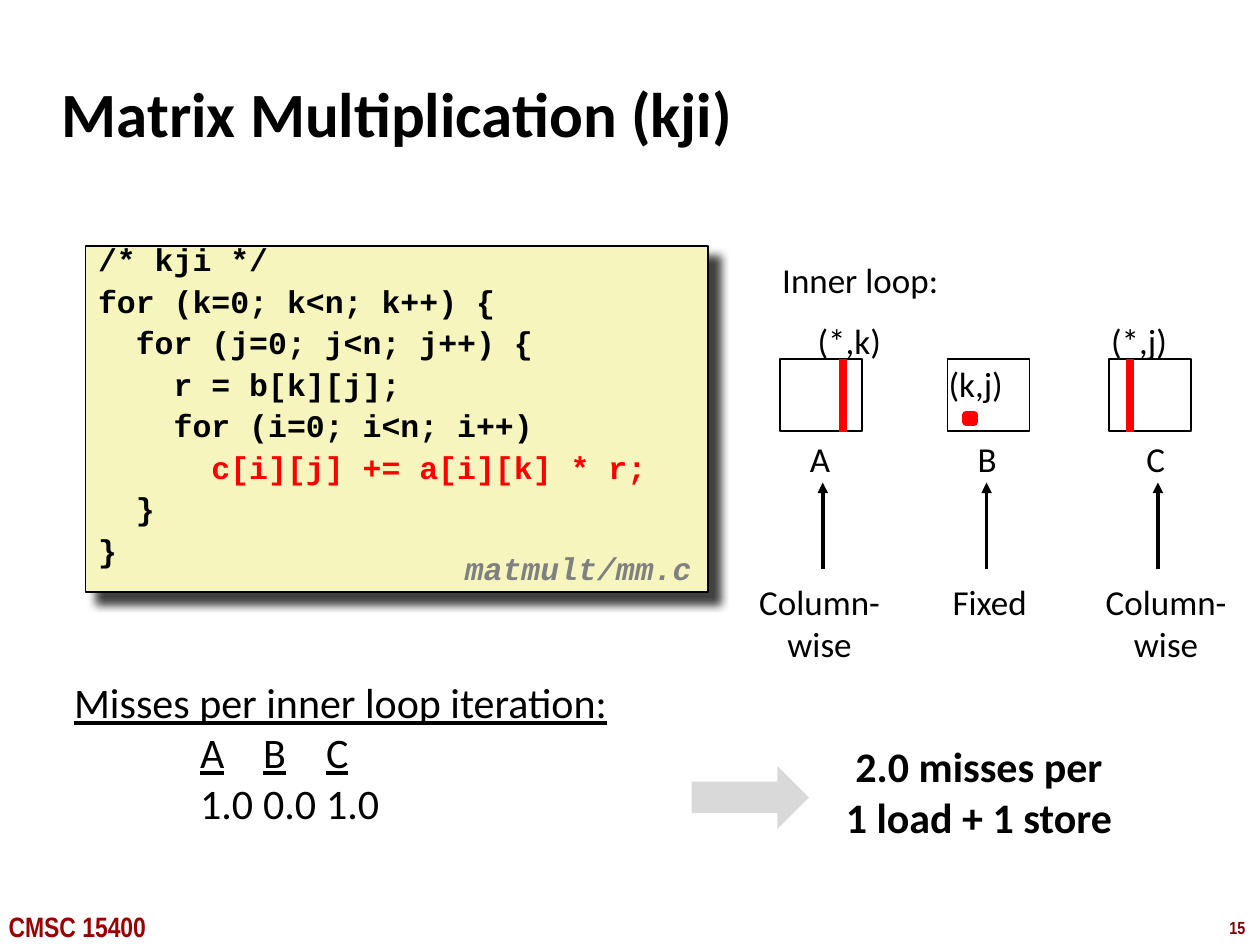
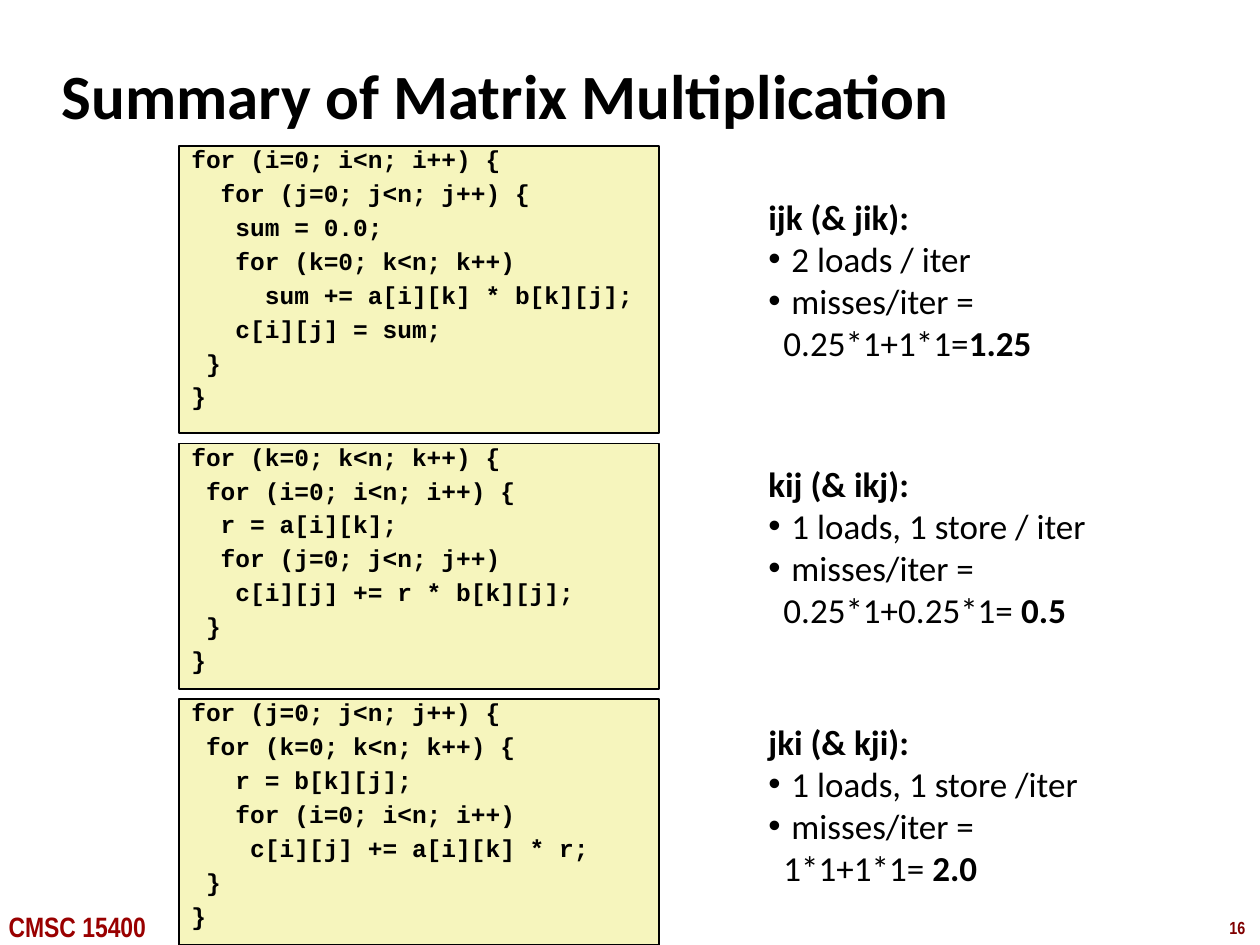
import lxml.etree
import pptx
import pptx.dml.color
import pptx.enum.shapes
import pptx.enum.text
import pptx.oxml.ns
import pptx.util

COLORS = {
    "ink": "000000", "paper": "FFFFFF", "code": "F6F5BD", "hot": "FF0000",
    "file": "808080", "arrow": "D9D9D9", "course": "990000", "number": "800000",
}
SANS, MONO, NARROW = "Calibri", "Courier New", "Arial Narrow"
COURSE = "CMSC 15400"

KJI = {
    "number": "15",
    "title": "Matrix Multiplication (kji)",
    "title_top": 0.48,
    "code": [
        "/* kji */",
        "for (k=0; k<n; k++) {",
        "  for (j=0; j<n; j++) {",
        "    r = b[k][j];",
        "    for (i=0; i<n; i++)",
        "      c[i][j] += a[i][k] * r;",
        "  }",
        "}",
    ],
    "hot_line": "c[i][j] += a[i][k] * r;",
    "file": "matmult/mm.c",
    "loop": "Inner loop:",
    "misses_title": "Misses per inner loop iteration:",
    "misses": {"A": "1.0", "B": "0.0", "C": "1.0"},
    "result": "2.0 misses per 1 load + 1 store",
}
MATRICES = [
    {"name": "A", "left": 6.19, "name_box": (6.33, 0.37), "index": "(*,k)",
     "index_box": (6.39, 2.49, 0.71), "access": ["Column-", "wise"],
     "access_box": (5.92, 1.17), "arrow": 6.53, "stripe": 6.69},
    {"name": "B", "left": 7.52, "name_box": (7.66, 0.35), "index": "(k,j)",
     "index_box": (7.43, 2.83, 0.63), "access": ["Fixed"],
     "access_box": (7.46, 0.79), "arrow": 7.83, "stripe": None},
    {"name": "C", "left": 8.8, "name_box": (9, 0.35), "index": "(*,j)",
     "index_box": (8.72, 2.49, 0.65), "access": ["Column-", "wise"],
     "access_box": (8.67, 1.17), "arrow": 9.19, "stripe": 8.97},
]

SUMMARY = {"number": "16", "title": "Summary of Matrix Multiplication", "title_top": 0.33}
ORDERS = [
    {"name": "ijk (& jik):", "loads": "2 loads / iter", "sum": "0.25*1+1*1=", "total": "1.25",
     "code_top": 1.16, "code_height": 2.28, "note_top": 1.5, "note_width": 3.83,
     "code": [
         "for (i=0; i<n; i++) {",
         "  for (j=0; j<n; j++) {",
         "   sum = 0.0;",
         "   for (k=0; k<n; k++)",
         "     sum += a[i][k] * b[k][j];",
         "   c[i][j] = sum;",
         " }",
         "}",
     ]},
    {"name": "kij (& ikj):", "loads": "1 loads, 1 store / iter", "sum": "0.25*1+0.25*1= ",
     "total": "0.5", "code_top": 3.52, "code_height": 1.95, "note_top": 3.62, "note_width": 3,
     "code": [
         "for (k=0; k<n; k++) {",
         " for (i=0; i<n; i++) {",
         "  r = a[i][k];",
         "  for (j=0; j<n; j++)",
         "   c[i][j] += r * b[k][j];",
         " }",
         "}",
     ]},
    {"name": "jki (& kji):", "loads": "1 loads, 1 store /iter", "sum": "1*1+1*1= ",
     "total": "2.0", "code_top": 5.55, "code_height": 1.95, "note_top": 5.67, "note_width": 3,
     "code": [
         "for (j=0; j<n; j++) {",
         " for (k=0; k<n; k++) {",
         "   r = b[k][j];",
         "   for (i=0; i<n; i++)",
         "    c[i][j] += a[i][k] * r;",
         " }",
         "}",
     ]},
]

CENTER = pptx.enum.text.PP_ALIGN.CENTER
RECTANGLE = pptx.enum.shapes.MSO_SHAPE.RECTANGLE


def inches(*lengths):
    return [pptx.util.Inches(length) for length in lengths]


def rgb(name):
    return pptx.dml.color.RGBColor.from_string(COLORS[name])


def element(parent, tag, **attributes):
    child = lxml.etree.SubElement(parent, pptx.oxml.ns.qn(tag))
    for key, value in attributes.items():
        child.set(key, str(value))
    return child


def add_span(para, text, size=20, font=SANS, color="ink", bold=False, italic=False,
             underline=False):
    span = para.add_run()
    span.text = text
    span.font.size = pptx.util.Pt(size)
    span.font.name = font
    span.font.color.rgb = rgb(color)
    span.font.bold = bold
    span.font.italic = italic
    span.font.underline = underline
    return span


def next_para(frame, index):
    return frame.add_paragraph() if index else frame.paragraphs[0]


def add_box(page, left, top, width, height, wrap=True):
    frame = page.shapes.add_textbox(*inches(left, top, width, height)).text_frame
    frame.word_wrap = wrap
    return frame


def add_label(page, lines, left, top, width, height=0.43, align=None, **style):
    frame = add_box(page, left, top, width, height, wrap=False)
    for index, line in enumerate(lines):
        para = next_para(frame, index)
        para.alignment = align
        add_span(para, line, **style)
    return frame


def add_block(page, kind, left, top, width, height, fill, line=None, weight=1):
    block = page.shapes.add_shape(kind, *inches(left, top, width, height))
    block.shadow.inherit = False
    block.fill.solid()
    block.fill.fore_color.rgb = rgb(fill)
    if line:
        block.line.color.rgb = rgb(line)
        block.line.width = pptx.util.Pt(weight)
    else:
        block.line.fill.background()
    return block


def add_line(page, x, bottom, top, color, weight, arrow=False):
    line = page.shapes.add_connector(
        pptx.enum.shapes.MSO_CONNECTOR.STRAIGHT, *inches(x, bottom, x, top))
    line.line.color.rgb = rgb(color)
    line.line.width = pptx.util.Pt(weight)
    if arrow:
        element(line.line._get_or_add_ln(), "a:tailEnd", type="triangle")
    element(line._element.spPr, "a:effectLst")


def add_code(page, lines, left, top, width, height, size, spacing, hot_line=None):
    block = add_block(page, RECTANGLE, left, top, width, height, "code", "ink")
    frame = block.text_frame
    frame.word_wrap = True
    frame.vertical_anchor = pptx.enum.text.MSO_ANCHOR.TOP
    for index, line in enumerate(lines):
        para = next_para(frame, index)
        para.alignment = pptx.enum.text.PP_ALIGN.LEFT
        para.line_spacing = spacing
        if index:
            para.space_before = pptx.util.Pt(round(0.54 * size, 1))
        if hot_line and line.strip() == hot_line:
            add_span(para, line[:-len(hot_line)], size, MONO, bold=True)
            add_span(para, hot_line, size, MONO, "hot", bold=True)
        else:
            add_span(para, line, size, MONO, bold=True)
    return block


def add_shadow(block):
    effects = block._element.spPr.find(pptx.oxml.ns.qn("a:effectLst"))
    shadow = element(effects, "a:outerShdw", blurRad=pptx.util.Pt(5), dist=pptx.util.Pt(8.5),
                     dir=45 * 60000, algn="tl", rotWithShape=0)
    color = element(shadow, "a:srgbClr", val=COLORS["ink"])
    element(color, "a:alpha", val=75000)


def set_indent(para, margin, first):
    properties = para._p.get_or_add_pPr()
    properties.set("marL", str(pptx.util.Inches(margin)))
    properties.set("indent", str(pptx.util.Inches(first)))
    return properties


def add_page(deck, content):
    page = deck.slides.add_slide(deck.slide_layouts[5])
    add_label(page, [content["number"]], 9.66, 7.23, 0.34, 0.27,
              size=10, font=NARROW, color="number", bold=True)
    add_label(page, [COURSE], -0.03, 7.17, 1.42, 0.37,
              size=16, font=NARROW, color="course", bold=True)
    title = page.shapes.title
    title.left, title.top, title.width, title.height = inches(
        0.39, content["title_top"], 8.3, 0.83)
    frame = title.text_frame
    frame.auto_size = pptx.enum.text.MSO_AUTO_SIZE.NONE
    frame.vertical_anchor = pptx.enum.text.MSO_ANCHOR.MIDDLE
    para = frame.paragraphs[0]
    para.alignment = pptx.enum.text.PP_ALIGN.LEFT
    set_indent(para, 0.13, -0.13)
    add_span(para, content["title"], 36, bold=True)
    return page


def add_matrix(page, matrix):
    add_block(page, RECTANGLE, matrix["left"], 2.85, 0.65, 0.57, "paper", "ink")
    name_left, name_width = matrix["name_box"]
    add_label(page, [matrix["name"]], name_left, 3.42, name_width)
    if matrix["stripe"]:
        add_line(page, matrix["stripe"], 3.43, 2.85, "hot", 4.5)
    else:
        add_block(page, RECTANGLE, 7.67, 3.29, 0.06, 0.06, "ink", "hot", 4.5)
    add_label(page, [matrix["index"]], *matrix["index_box"])
    access_left, access_width = matrix["access_box"]
    lines = matrix["access"]
    add_label(page, lines, access_left, 4.56, access_width, 0.09 + 0.34 * len(lines), CENTER)
    add_line(page, matrix["arrow"], 4.52, 3.83, "ink", 2, arrow=True)


def add_misses(page, heading, misses):
    frame = add_box(page, 0.49, 5.32, 5.43, 1.34)
    add_span(frame.paragraphs[0], heading, 24, underline=True)
    for values, underline in ((misses.keys(), True), (misses.values(), False)):
        para = frame.add_paragraph()
        tabs = element(set_indent(para, 0, 0), "a:tabLst")
        for stop in range(len(misses) + 1):
            element(tabs, "a:tab", pos=pptx.util.Inches(0.61 + 0.98 * stop), algn="l")
        add_span(para, "\t", 24)
        for value in values:
            add_span(para, "\t", 24)
            add_span(para, value, 24, underline=underline)


def add_note(page, order):
    frame = add_box(page, 6, order["note_top"], order["note_width"], 1.44)
    add_span(frame.paragraphs[0], order["name"], bold=True)
    for text in (order["loads"], "misses/iter ="):
        para = frame.add_paragraph()
        para.level = 1
        properties = set_indent(para, 0.12, -0.12)
        element(properties, "a:buFont", typeface="Arial")
        element(properties, "a:buChar", char="•")
        add_span(para, " " + text)
    para.add_line_break()
    add_span(para, order["sum"])
    add_span(para, order["total"], bold=True)


def build_kji(deck):
    page = add_page(deck, KJI)
    add_shadow(add_code(page, KJI["code"], 0.68, 1.95, 4.94, 2.75, 18, 0.65, KJI["hot_line"]))
    file_frame = add_label(page, [KJI["file"]], 3.59, 4.33, 2.08, 0.39,
                           size=18, font=MONO, color="file", bold=True, italic=True)
    file_frame.paragraphs[0].line_spacing = 0.94
    add_label(page, [KJI["loop"]], 6.11, 2, 1.45)
    for matrix in MATRICES:
        add_matrix(page, matrix)
    add_misses(page, KJI["misses_title"], KJI["misses"])
    add_block(page, pptx.enum.shapes.MSO_SHAPE.RIGHT_ARROW, 5.49, 6.08, 0.93, 0.5, "arrow")
    para = add_box(page, 6.6, 5.83, 2.34, 0.91).paragraphs[0]
    para.alignment = CENTER
    add_span(para, KJI["result"], 24, bold=True)


def build_summary(deck):
    page = add_page(deck, SUMMARY)
    for order in ORDERS:
        add_note(page, order)
        add_code(page, order["code"], 1.42, order["code_top"], 3.81, order["code_height"], 14, 0.7)


def main():
    deck = pptx.Presentation()
    deck.slide_width, deck.slide_height = inches(10, 7.5)
    build_kji(deck)
    build_summary(deck)
    deck.save("out.pptx")


if __name__ == "__main__":
    main()
